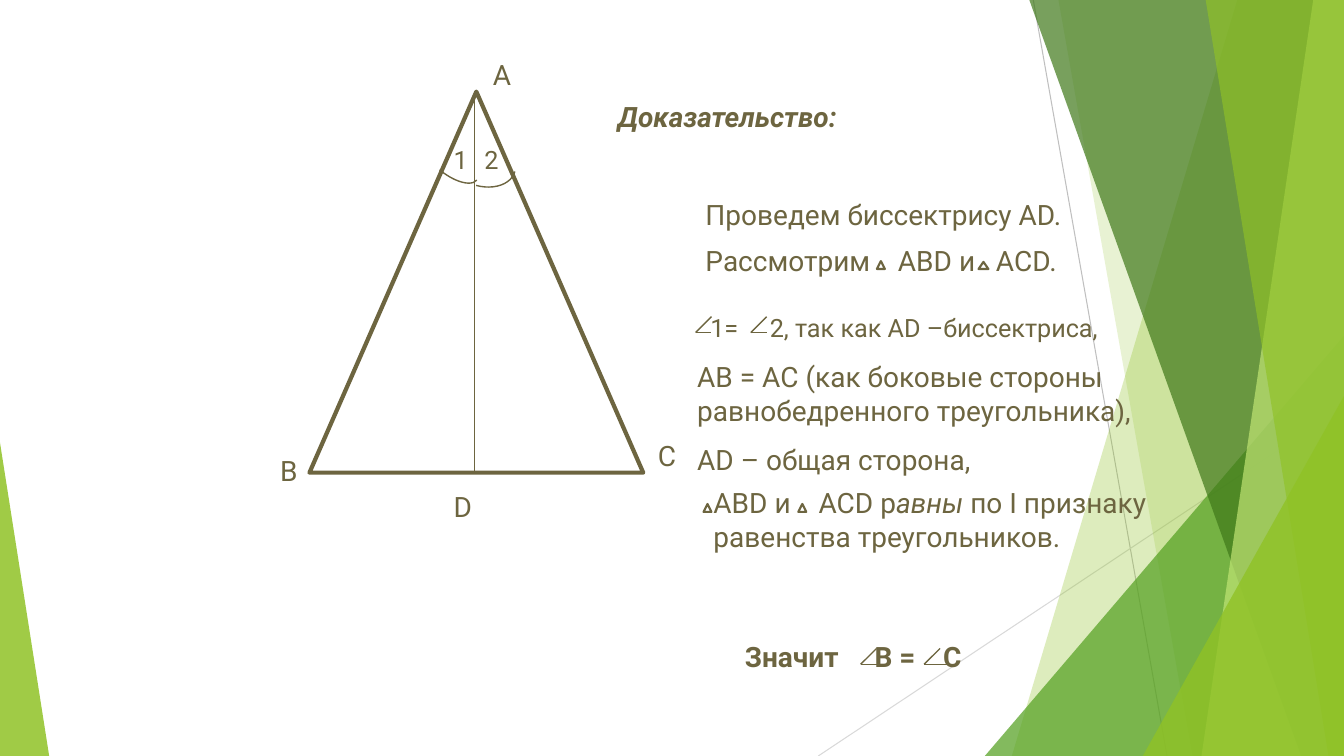
from lxml import etree
from pptx import Presentation, util as u
from pptx.dml.color import RGBColor
from pptx.enum import shapes, text
from pptx.oxml.ns import qn

W, H = 33.87, 19.05
INK = "6D6540"
LIME, GREEN, DARK, PALE = "90C226", "54A021", "3F7819", "C0E474"

BACK_LINES = [
    ((26.04, 0), (29.41, H), "BFBFBF"),
    ((W, 10.24), (20.62, H), "D9D9D9"),
]
BANDS = [
    ("quad", 31.19, 25.5, LIME, 30),
    ("quad", 26.67, 30.05, LIME, 20),
    ("right", 24.82, 8.46, GREEN, 72),
    ("quad", 25.93, 32.79, DARK, 70),
    ("quad", 33.1, 30.28, PALE, 70),
    ("quad", 30.38, 33.48, LIME, 65),
    ("right", 28.8, 9.98, LIME, 80),
    ("left", 1.24, 11.15, LIME, 85),
]
TRIANGLE = (7.8, 2.31, 8.41, 9.6)
BISECTOR = 11.96
ARCS = [
    ((11.56, 3.25, 1.19, 1.7), 105.3, False),
    ((10.44, 3.58, 1.78, 0.79), 39.3, True),
]
TRIANGLE_SIGNS = [
    (17.73, 12.7, 0.2, 0.2),
    (20.12, 12.7, 0.2, 0.2),
    (22.1, 6.58, 0.2, 0.2),
    (24.66, 6.6, 0.25, 0.18),
]
ANGLE_SIGNS = [
    (17.53, 8.38, 0.4),
    (18.92, 8.38, 0.4),
    (21.69, 16.74, 0.6),
    (23.29, 16.74, 0.6),
]
LABELS = [
    ("А", 12.17, 1.32, 1.19, 20),
    ("В", 6.81, 11.3, 1.6, 20),
    ("С", 16.33, 10.92, 1.4, 20),
    ("D", 11.18, 12.22, 1.6, 20),
    ("1", 11.18, 3.51, 0.84, 18),
    ("2", 11.96, 3.51, 1.55, 18),
]
PROOF = [
    (["Проведем биссектрису AD."], 17.53, 4.85, 12.12, 20, []),
    (["Рассмотрим\tАВD и\tАСD."], 17.53, 6.02, 12.7, 20, [4.85, 7.32]),
    (["1=\t2, так как AD –биссектриса,"], 17.65, 7.75, 10.5, 18, [1.5]),
    (["АВ = AС (как боковые стороны равнобедренного треугольника),",
      "AD – общая сторона,"], 17.32, 8.94, 14.48, 20, []),
    (["АВD и\tАСD р*авны *по I признаку равенства треугольников."],
     17.73, 12.12, 11.91, 20, [2.65]),
]
HEADING = (["Доказательство:"], 15.32, 2.39, 9.14, 20, [])
RESULT = (["Значит\tВ =\tС"], 18.52, 16, 6.93, 20, [3.27, 5])

prs = Presentation()
prs.slide_width, prs.slide_height = u.Cm(W), u.Cm(H)
s = prs.slides.add_slide(prs.slide_layouts[6])


def color(fmt, value):
    fmt.rgb = RGBColor.from_string(value)


def line(start, end, value, width):
    c = s.shapes.add_connector(shapes.MSO_CONNECTOR.STRAIGHT,
                               *(u.Cm(v) for v in (*start, *end)))
    color(c.line.color, value)
    c.line.width = u.Pt(width)
    etree.SubElement(c._element.spPr, qn("a:effectLst"))


def shape(kind, box):
    sp = s.shapes.add_shape(kind, *(u.Cm(v) for v in box))
    sp.shadow.inherit = False
    return sp


def outline(kind, box, width):
    sp = shape(kind, box)
    sp.fill.background()
    color(sp.line.color, INK)
    sp.line.width = u.Pt(width)
    return sp


def band(kind, a, b, value, alpha):
    if kind == "quad":
        fb = s.shapes.build_freeform(u.Cm(a), u.Cm(-0.03))
        fb.add_line_segments([(u.Cm(x), u.Cm(y)) for x, y in
                              ((W, -0.03), (W, H), (b, H))])
        sp = fb.convert_to_shape()
        sp.shadow.inherit = False
    else:
        left, width = (0, a) if kind == "left" else (a, W - a)
        sp = shape(shapes.MSO_SHAPE.ISOSCELES_TRIANGLE,
                   (left, b, width, H - b))
        sp.adjustments[0] = 0 if kind == "left" else 1
    sp.fill.solid()
    color(sp.fill.fore_color, value)
    clr = sp._element.spPr.find(qn("a:solidFill"))[0]
    etree.SubElement(clr, qn("a:alpha")).set("val", str(alpha * 1000))
    sp.line.fill.background()


def write(paras, left, top, width, size, tabs, bold=False, italic=False):
    box = s.shapes.add_textbox(u.Cm(left), u.Cm(top), u.Cm(width), u.Cm(1.12))
    tf = box.text_frame
    tf.word_wrap = True
    tf.auto_size = text.MSO_AUTO_SIZE.SHAPE_TO_FIT_TEXT
    for i, para in enumerate(paras):
        p = tf.add_paragraph() if i else tf.paragraphs[0]
        if i:
            p.space_before = u.Pt(11)
        if tabs:
            tab_list = etree.SubElement(p._p.get_or_add_pPr(), qn("a:tabLst"))
            for pos in tabs:
                tab = etree.SubElement(tab_list, qn("a:tab"))
                tab.set("pos", str(u.Cm(pos)))
                tab.set("algn", "l")
        p.font.name, p.font.size = "Roboto", u.Pt(size)
        p.font.bold, p.font.italic = bold, italic
        color(p.font.color, INK)
        for j, part in enumerate(para.split("*")):
            r = p.add_run()
            r.text = part
            if j % 2:
                r.font.italic = True


for start, end, value in BACK_LINES:
    line(start, end, value, 0.75)
for item in BANDS:
    band(*item)

TRI = shapes.MSO_SHAPE.ISOSCELES_TRIANGLE
outline(TRI, TRIANGLE, 3)
top, bottom = TRIANGLE[1], TRIANGLE[1] + TRIANGLE[3]
line((BISECTOR, top), (BISECTOR, bottom), INK, 0.75)
for box, angle, flipped in ARCS:
    arc = outline(shapes.MSO_SHAPE.ARC, box, 1)
    arc.rotation = angle
    if flipped:
        arc._element.spPr.xfrm.set("flipV", "1")

for label, left, y, width, size in LABELS:
    write([label], left, y, width, size, [])
write(*HEADING, bold=True, italic=True)
for item in PROOF:
    write(*item)
write(*RESULT, bold=True)

for box in TRIANGLE_SIGNS:
    outline(TRI, box, 1.5)
for x, y, base in ANGLE_SIGNS:
    line((x, y), (x + 0.4, y - 0.4), INK, 1)
    line((x, y), (x + base, y), INK, 1)

prs.save("out.pptx")
